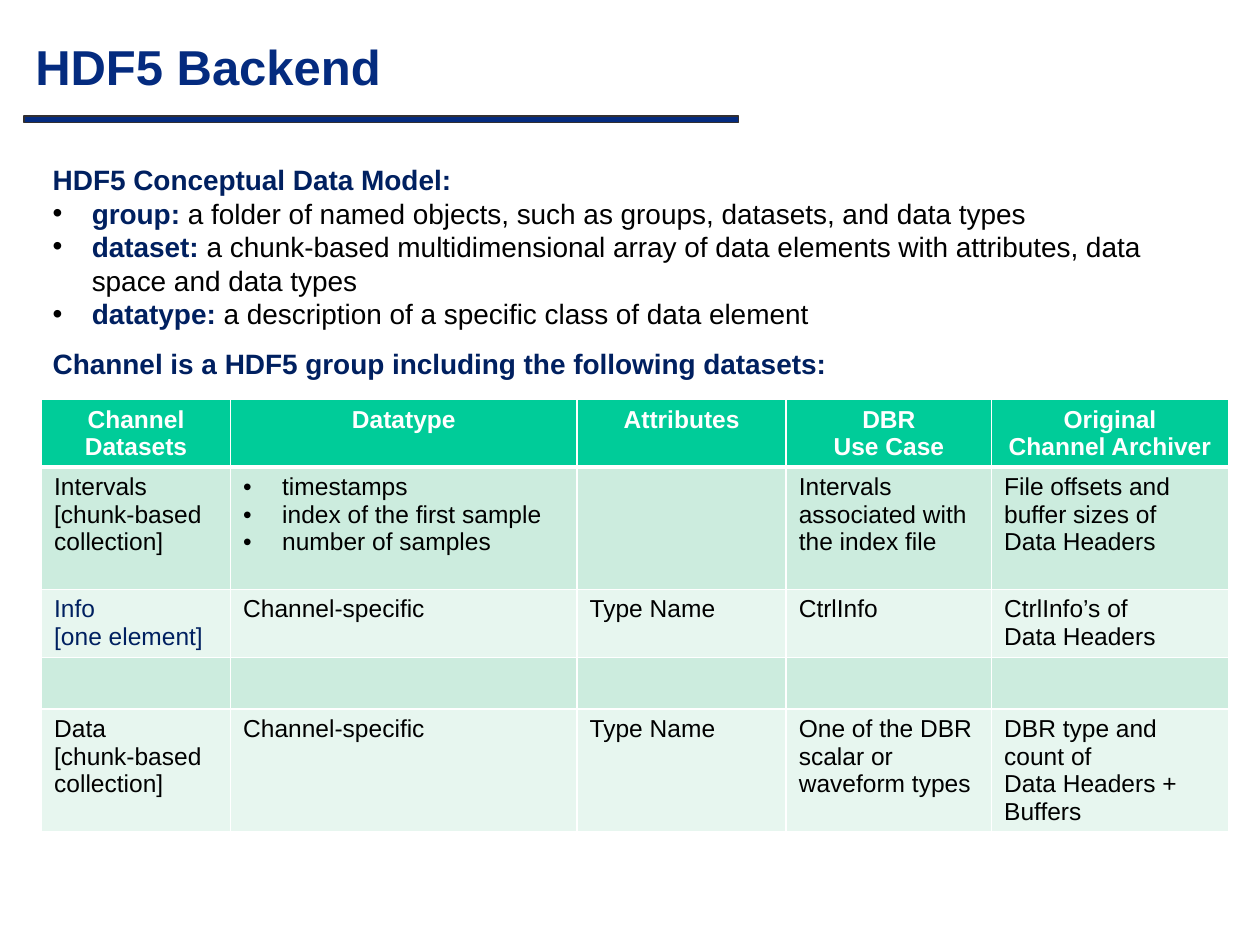
from dataclasses import dataclass

import lxml.etree
import pptx
import pptx.dml.color
import pptx.enum.shapes
import pptx.enum.text
import pptx.oxml.ns
import pptx.util

COLORS = {
    "title": "042B7F", "outline": "322F31", "navy": "002060", "black": "000000",
    "white": "FFFFFF", "header": "00CC99", "odd": "CCECDE", "even": "E7F6EF",
}
FONT = "Arial"
GRID_COLUMNS, GRID_ROWS = 100, 75
ANCHOR = pptx.enum.text.MSO_ANCHOR
ALIGN = pptx.enum.text.PP_ALIGN
AUTO_SIZE = pptx.enum.text.MSO_AUTO_SIZE

deck = pptx.Presentation()
deck.slide_width = pptx.util.Inches(10)
deck.slide_height = pptx.util.Inches(7.5)


@dataclass(frozen=True)
class Area:
    column: float
    row: float
    columns: float
    rows: float

    def lengths(self) -> tuple:
        return (across(self.column), down(self.row), across(self.columns), down(self.rows))


@dataclass(frozen=True)
class Span:
    text: str
    color: str = "black"
    bold: bool = False


@dataclass(frozen=True)
class Para:
    spans: tuple
    bullet: bool = False


@dataclass(frozen=True)
class TableRow:
    height: float
    fill: str
    cells: tuple
    first_color: str = "black"


def across(columns: float) -> int:
    return round(deck.slide_width * columns / GRID_COLUMNS)


def down(rows: float) -> int:
    return round(deck.slide_height * rows / GRID_ROWS)


def rgb(name: str) -> pptx.dml.color.RGBColor:
    return pptx.dml.color.RGBColor.from_string(COLORS[name])


def add_element(parent, tag: str, **attributes: str):
    element = lxml.etree.SubElement(parent, pptx.oxml.ns.qn(tag))
    for key, value in attributes.items():
        element.set(key, value)
    return element


def add_bullet(para) -> None:
    properties = para._p.get_or_add_pPr()
    indent = pptx.util.Inches(0.31)
    properties.set("marL", str(indent))
    properties.set("indent", str(-indent))
    color = add_element(properties, "a:buClr")
    add_element(color, "a:srgbClr", val=COLORS["black"])
    add_element(properties, "a:buFont", typeface=FONT)
    add_element(properties, "a:buChar", char="•")


def write(frame, paras: list, size: float, align=ALIGN.LEFT) -> None:
    for index, item in enumerate(paras):
        para = frame.paragraphs[0] if index == 0 else frame.add_paragraph()
        para.alignment = align
        if item.bullet:
            add_bullet(para)
        for part in item.spans:
            span = para.add_run()
            span.text = part.text
            span.font.name = FONT
            span.font.size = pptx.util.Pt(size)
            span.font.bold = part.bold
            span.font.color.rgb = rgb(part.color)


def add_text(page, area: Area, paras: list, wrap: bool) -> None:
    frame = page.shapes.add_textbox(*area.lengths()).text_frame
    frame.word_wrap = wrap
    frame.auto_size = AUTO_SIZE.SHAPE_TO_FIT_TEXT
    write(frame, paras, 16)


def set_title(page, area: Area, text: str) -> None:
    title = page.shapes.title
    title.left, title.top, title.width, title.height = area.lengths()
    frame = title.text_frame
    frame.auto_size = AUTO_SIZE.NONE
    frame.vertical_anchor = ANCHOR.MIDDLE
    write(frame, [Para((Span(text, "title", True),))], 28)
    frame.paragraphs[0].line_spacing = 0.8


def add_rule(page, area: Area) -> None:
    rule = page.shapes.add_shape(pptx.enum.shapes.MSO_SHAPE.RECTANGLE, *area.lengths())
    rule.shadow.inherit = False
    rule.fill.solid()
    rule.fill.fore_color.rgb = rgb("title")
    rule.line.color.rgb = rgb("outline")
    rule.line.width = pptx.util.Pt(0.75)


def add_borders(cell, top: float, bottom: float) -> None:
    properties = cell._tc.get_or_add_tcPr()
    for side, width in (("L", 1), ("R", 1), ("T", top), ("B", bottom)):
        line = add_element(properties, f"a:ln{side}", w=str(pptx.util.Pt(width)))
        fill = add_element(line, "a:solidFill")
        add_element(fill, "a:srgbClr", val=COLORS["white"])


def add_dataset_table(page, area: Area, widths: tuple, rows: list) -> None:
    table = page.shapes.add_table(len(rows), len(widths), *area.lengths()).table
    table.horz_banding = False
    for column, width in zip(table.columns, widths):
        column.width = across(width)
    for row_index, row in enumerate(rows):
        table.rows[row_index].height = down(row.height)
        heading = row_index == 0
        for column_index, lines in enumerate(row.cells):
            cell = table.cell(row_index, column_index)
            add_borders(cell, 3 if row_index == 1 else 1, 3 if heading else 1)
            cell.fill.solid()
            cell.fill.fore_color.rgb = rgb(row.fill)
            color = "white" if heading else row.first_color if column_index == 0 else "black"
            paras = [
                Para((Span(line.removeprefix("• "), color, heading),), line.startswith("• "))
                for line in lines
            ]
            write(cell.text_frame, paras, 14, ALIGN.CENTER if heading else ALIGN.LEFT)


def definition(term: str, meaning: str) -> Para:
    return Para((Span(f"{term}: ", "navy", True), Span(meaning)), True)


def heading(text: str) -> Para:
    return Para((Span(text, "navy", True),))


CONCEPTS = [
    heading("HDF5 Conceptual Data Model:"),
    definition("group", "a folder of named objects, such as groups, datasets, and data types"),
    definition("dataset", "a chunk-based multidimensional array of data elements "
                          "with attributes, data space and data types"),
    definition("datatype", "a description of a specific class of data element"),
]

CHUNKED = "[chunk-based collection]"
SPECIFIC = ("Channel-specific",)
TYPE_NAME = ("Type Name",)
DATASETS = [
    TableRow(5.3, "header", (
        ("Channel Datasets",), ("Datatype",), ("Attributes",),
        ("DBR", "Use Case"), ("Original", "Channel Archiver"))),
    TableRow(9.7, "odd", (
        ("Intervals", CHUNKED),
        ("• timestamps", "• index of the first sample", "• number of samples"), (),
        ("Intervals associated with the index file",),
        ("File offsets and buffer sizes of", "Data Headers"))),
    TableRow(5.4, "even", (
        ("Info", "[one element]"), SPECIFIC, TYPE_NAME, ("CtrlInfo",),
        ("CtrlInfo’s of", "Data Headers")), "navy"),
    TableRow(4.1, "odd", ((),) * 5),
    TableRow(9.7, "even", (
        ("Data", CHUNKED), SPECIFIC, TYPE_NAME,
        ("One of the DBR scalar or waveform types",),
        ("DBR type and count of", "Data Headers + Buffers"))),
]
WIDTHS = (15, 27.5, 16.6, 16.3, 18.8)


def main() -> None:
    page = deck.slides.add_slide(deck.slide_layouts[5])
    set_title(page, Area(1.8, 1.9, 56.5, 7.5), "HDF5 Backend")
    table_height = sum(row.height for row in DATASETS)
    add_dataset_table(page, Area(3.3, 31.7, sum(WIDTHS), table_height), WIDTHS, DATASETS)
    add_text(page, Area(3.2, 12.4, 91.8, 14.5), CONCEPTS, True)
    add_rule(page, Area(1.9, 9.2, 56.7, 0.5))
    add_text(page, Area(3.2, 27, 64.9, 3.7),
             [heading("Channel is a HDF5 group including the following datasets:")], False)
    deck.save("out.pptx")


if __name__ == "__main__":
    main()
